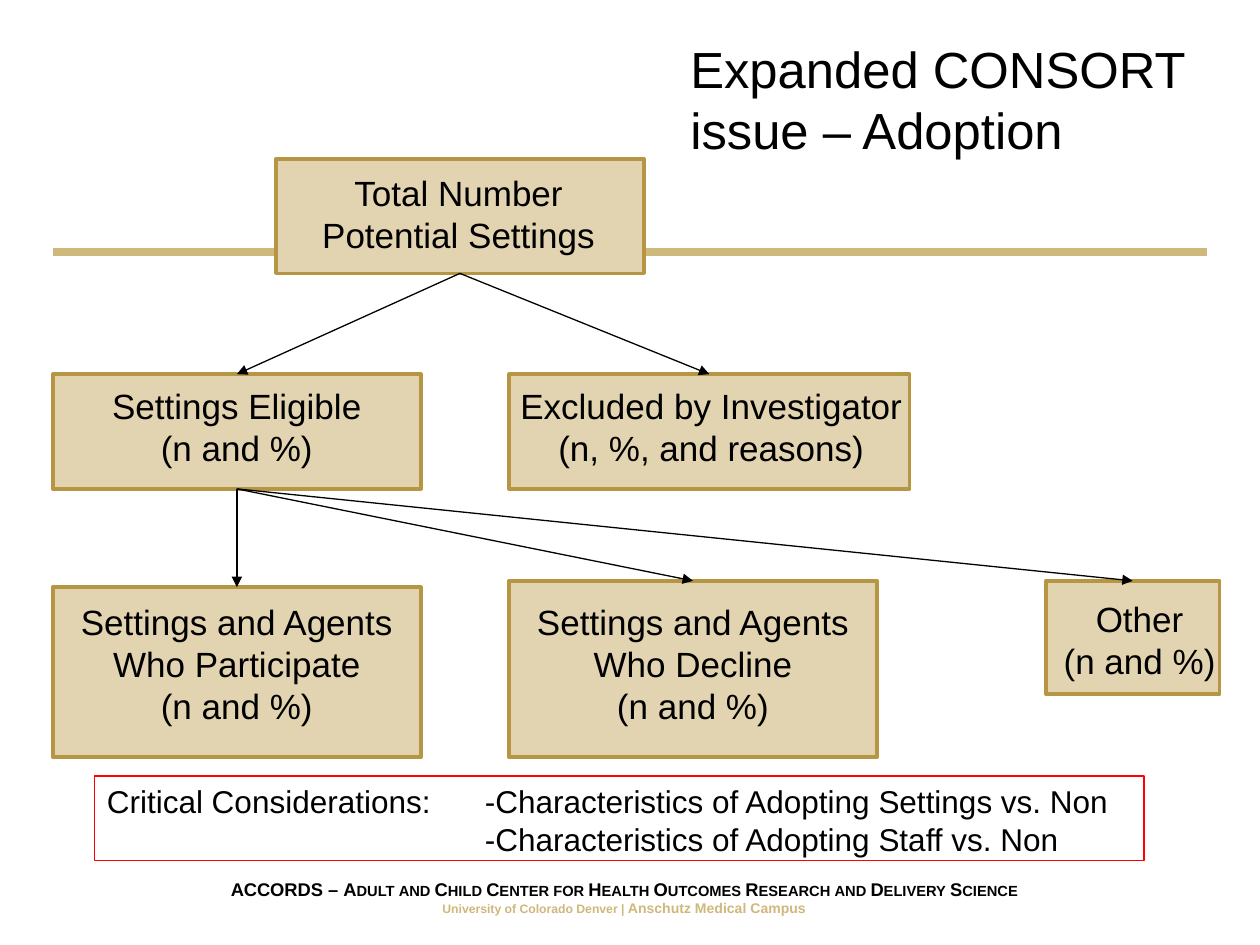
import pptx
import pptx.dml.color
import pptx.enum.shapes
import pptx.enum.text
import pptx.oxml
import pptx.oxml.ns
import pptx.util

PX = 9144  # 100 px to the inch
COLORS = {
    "black": "000000",
    "gold": "CFB87C",
    "node_fill": "E2D4B0",
    "node_line": "B69643",
    "alert": "FF0000",
}
CENTER = pptx.enum.text.PP_ALIGN.CENTER
LEFT = pptx.enum.text.PP_ALIGN.LEFT
MIDDLE = pptx.enum.text.MSO_ANCHOR.MIDDLE
TOP = pptx.enum.text.MSO_ANCHOR.TOP
RECTANGLE = pptx.enum.shapes.MSO_SHAPE.RECTANGLE
STRAIGHT = pptx.enum.shapes.MSO_CONNECTOR.STRAIGHT
BOTTOM_SIDE, TOP_SIDE = 2, 0

# name: box, label box as offset from that box plus its size, label lines
NODES = {
    "total": ((219, 126, 292, 91), (8, 5, 274, 77),
              ["Total Number Potential Settings"]),
    "eligible": ((42, 297, 292, 91), (9, 3, 274, 77),
                 ["Settings Eligible", "(n and %)"]),
    "excluded": ((404, 297, 318, 91), (-4, 3, 329, 77),
                 ["Excluded by Investigator", "(n, %, and reasons)"]),
    "participate": ((42, 466, 292, 135), (9, 6, 274, 111),
                    ["Settings and Agents", "Who Participate", "(n and %)"]),
    "decline": ((404, 461, 292, 140), (9, 11, 274, 111),
                ["Settings and Agents Who Decline", "(n and %)"]),
    "other": ((830, 461, 138, 90), (3, 8, 143, 77),
              ["Other", "(n and %)"]),
}
ARROWS = [
    ("total", "eligible"),
    ("eligible", "participate"),
    ("total", "excluded"),
    ("eligible", "decline"),
    ("eligible", "other"),
]


def emu(lengths):
    return [length * PX for length in lengths]


def rgb(name):
    return pptx.dml.color.RGBColor.from_string(COLORS[name])


def add_span(para, text, size, color="black", **formats):
    span = para.add_run()
    span.text = text
    formats = {"name": "Arial", "size": pptx.util.Pt(size), **formats}
    for key, value in formats.items():
        setattr(span.font, key, value)
    span.font.color.rgb = rgb(color)
    return span


def add_paragraphs(frame, lines, size, align):
    for index, line in enumerate(lines):
        para = frame.paragraphs[0] if index == 0 else frame.add_paragraph()
        para.alignment = align
        add_span(para, line, size)


def add_text(page, box, lines, size, align=LEFT, anchor=TOP):
    frame = page.shapes.add_textbox(*emu(box)).text_frame
    frame.word_wrap = True
    frame.vertical_anchor = anchor
    add_paragraphs(frame, lines, size, align)
    return frame


def add_rectangle(page, box, line_color, line_width, fill=None):
    shape = page.shapes.add_shape(RECTANGLE, *emu(box))
    shape.shadow.inherit = False
    if fill:
        shape.fill.solid()
        shape.fill.fore_color.rgb = rgb(fill)
    else:
        shape.fill.background()
    shape.line.color.rgb = rgb(line_color)
    shape.line.width = pptx.util.Pt(line_width)
    return shape


def add_line(page, ends, color, width):
    line = page.shapes.add_connector(STRAIGHT, *emu(ends))
    line.line.color.rgb = rgb(color)
    line.line.width = pptx.util.Pt(width)
    pptx.oxml.ns.qn("a:effectLst")
    line._element.spPr.append(pptx.oxml.parse_xml(
        f'<a:effectLst {pptx.oxml.ns.nsdecls("a")}/>'))
    return line


def add_arrow(page, start, end):
    arrow = add_line(page, (0, 0, 0, 0), "black", 0.75)
    arrow.begin_connect(start, BOTTOM_SIDE)
    arrow.end_connect(end, TOP_SIDE)
    arrow.line._get_or_add_ln().append(pptx.oxml.parse_xml(
        f'<a:tailEnd {pptx.oxml.ns.nsdecls("a")} type="triangle"/>'))


def add_footer(page, box):
    left, top, width, height = box
    frame = add_text(page, (left, top, width, height), [], 8, anchor=MIDDLE)
    center, campus = frame.paragraphs[0], frame.add_paragraph()
    for para in (center, campus):
        para.alignment = CENTER
    add_span(center, "ACCORDS – ", 10.5, bold=True)
    name = add_span(center, "Adult and Child Center for Health Outcomes "
                    "Research and Delivery Science", 10.5, bold=True)
    name._r.get_or_add_rPr().set("cap", "small")
    add_span(campus, "University of Colorado Denver | ", 7, "gold", bold=True)
    add_span(campus, "Anschutz Medical Campus", 8, "gold", bold=True)


def add_considerations(page, box):
    frame = add_rectangle(page, box, "alert", 0.75).text_frame
    frame.word_wrap = True
    frame.vertical_anchor = TOP
    lines = ["Critical Considerations:\t-Characteristics of Adopting Settings vs. Non",
             "\t-Characteristics of Adopting Staff vs. Non"]
    add_paragraphs(frame, lines, 18, LEFT)
    for para in frame.paragraphs:
        para._p.get_or_add_pPr().append(pptx.oxml.parse_xml(
            f'<a:tabLst {pptx.oxml.ns.nsdecls("a")}>'
            f'<a:tab pos="{300 * PX}" algn="l"/></a:tabLst>'))


def add_flowchart(page, origin):
    """Draw boxes, then labels, then arrows, shifted by the origin."""
    x, y = origin
    shapes = {}
    for name, ((left, top, width, height), _, _) in NODES.items():
        shapes[name] = add_rectangle(page, (x + left, y + top, width, height),
                                     "node_line", 2, "node_fill")
    for (left, top, _, _), (dx, dy, width, height), lines in NODES.values():
        add_text(page, (x + left + dx, y + top + dy, width, height),
                 lines, 20, CENTER)
    for start, end in ARROWS:
        add_arrow(page, shapes[start], shapes[end])


def main():
    deck = pptx.Presentation()
    deck.slide_width, deck.slide_height = emu((1000, 750))
    page = deck.slides.add_slide(deck.slide_layouts[6])
    add_line(page, (42, 200, 958, 200), "gold", 4.5)
    add_footer(page, (79, 692, 833, 40))
    add_text(page, (538, 32, 462, 93), ["Expanded CONSORT issue – Adoption"],
             29, anchor=MIDDLE)
    add_considerations(page, (75, 616, 833, 67))
    add_flowchart(page, (0, 0))
    deck.save("out.pptx")


if __name__ == "__main__":
    main()
